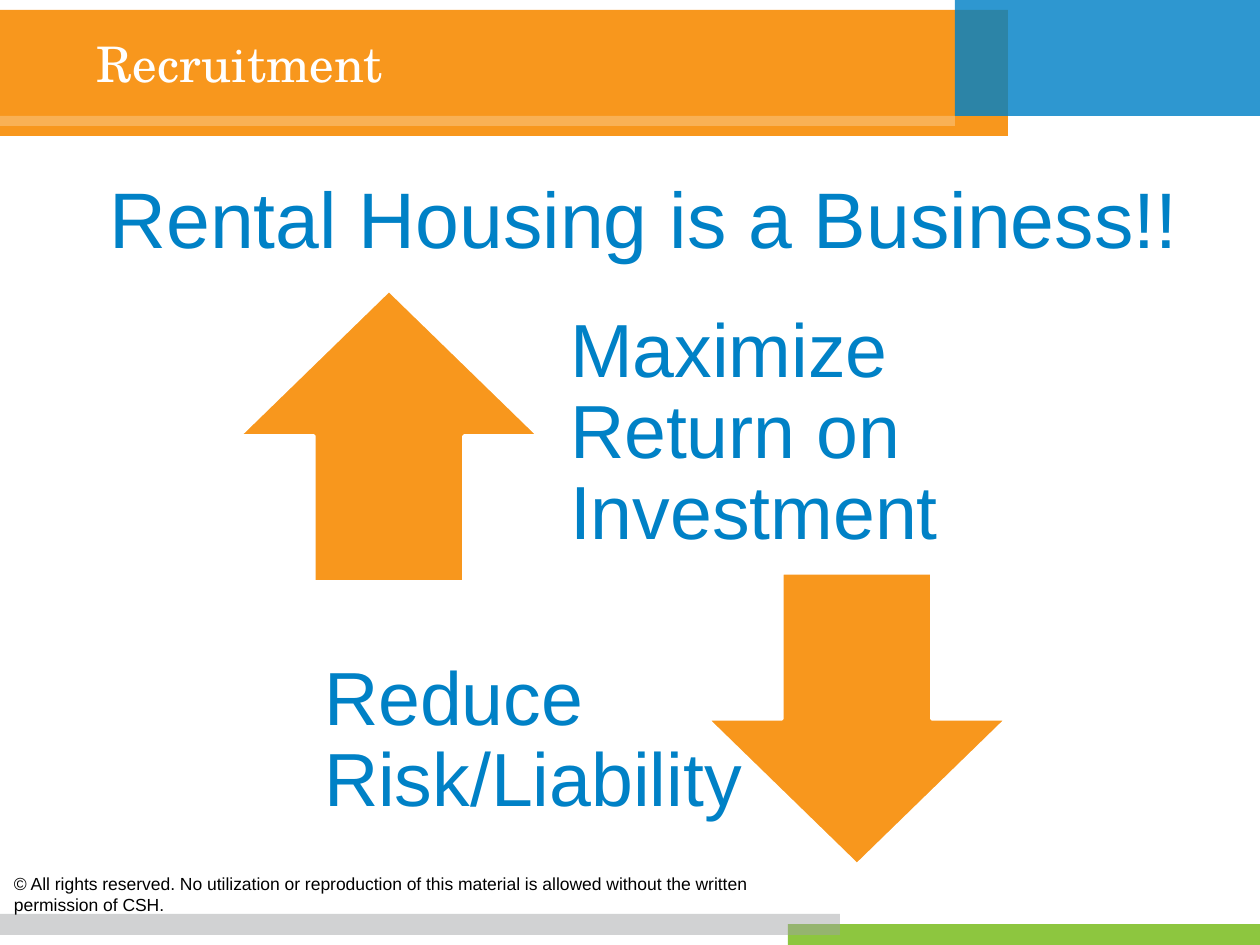
"""Build the Recruitment slide on rental housing as a business."""
from dataclasses import dataclass

from lxml.etree import SubElement
from pptx import Presentation
from pptx.dml.color import RGBColor
from pptx.enum.shapes import MSO_SHAPE
from pptx.enum.text import MSO_ANCHOR, PP_ALIGN
from pptx.oxml.ns import qn
from pptx.util import Emu, Pt


@dataclass(frozen=True)
class Theme:
    orange: str = "F8971D"
    blue: str = "0081C6"
    green: str = "8DC63F"
    grey: str = "9FA1A4"
    white: str = "FFFFFF"
    black: str = "000000"
    sans: str = "Arial"
    serif: str = "TeX Gyre Schola"
    note: int = 10
    title: int = 28
    label: int = 43
    head: int = 45


theme = Theme()
SCALE = 914400 / 126


def px(*nums):
    return [Emu(round(n * SCALE)) for n in nums]


def write(text, box, size, color, font=theme.sans, align=PP_ALIGN.LEFT,
          anchor=MSO_ANCHOR.TOP, inset=(13, 6, 13, 6), space=1.0):
    frame = slide.shapes.add_textbox(*px(*box)).text_frame
    frame.word_wrap = True
    frame.vertical_anchor = anchor
    (frame.margin_left, frame.margin_top,
     frame.margin_right, frame.margin_bottom) = px(*inset)
    para = frame.paragraphs[0]
    para.alignment = align
    para.line_spacing = space
    run = para.add_run()
    run.text = text
    run.font.name = font
    run.font.size = Pt(size)
    run.font.color.rgb = RGBColor.from_string(color)


deck = Presentation()
deck.slide_width, deck.slide_height = px(1260, 945)
slide = deck.slides.add_slide(deck.slide_layouts[6])

bars = [
    ((0, 10, 1008, 126), theme.orange, 100),
    ((955, 0, 305, 116), theme.blue, 82),
    ((788, 924, 472, 21), theme.green, 100),
    ((0, 914, 840, 21), theme.grey, 48),
    ((0, 116, 955, 10), theme.white, 25),
]
for box, color, alpha in bars:
    bar = slide.shapes.add_shape(MSO_SHAPE.RECTANGLE, *px(*box))
    bar.shadow.inherit = False
    bar.line.fill.background()
    bar.fill.solid()
    bar.fill.fore_color.rgb = RGBColor.from_string(color)
    if alpha < 100:
        tint = bar.fill._xPr.find(qn("a:solidFill"))[0]
        SubElement(tint, qn("a:alpha"), val=str(alpha * 1000))

write("© All rights reserved. No utilization or reproduction of this material "
      "is allowed without the written permission of CSH.",
      (1, 867, 839, 55), theme.note, theme.black)
write("Recruitment", (84, 26, 829, 73), theme.title, theme.white,
      font=theme.serif, anchor=MSO_ANCHOR.MIDDLE, inset=(13, 13, 13, 13))

pairs = [
    (MSO_SHAPE.UP_ARROW, (239, 290), "Maximize Return on Investment",
     (528, 309, 510, 292)),
    (MSO_SHAPE.DOWN_ARROW, (707, 573), "Reduce Risk/Liability",
     (282, 658, 510, 209)),
]
for kind, spot, text, box in pairs:
    arrow = slide.shapes.add_shape(kind, *px(*spot, 300, 292))
    arrow.shadow.inherit = False
    arrow.fill.solid()
    arrow.fill.fore_color.rgb = RGBColor.from_string(theme.orange)
    arrow.line.color.rgb = RGBColor.from_string(theme.white)
    arrow.line.width = Pt(2)
    write(text, box, theme.label, theme.blue, anchor=MSO_ANCHOR.MIDDLE,
          inset=(42, 0, 42, 42), space=0.9)

write("Rental Housing is a Business!!", (-30, 164, 1347, 108), theme.head,
      theme.blue, align=PP_ALIGN.CENTER)

deck.save("out.pptx")
